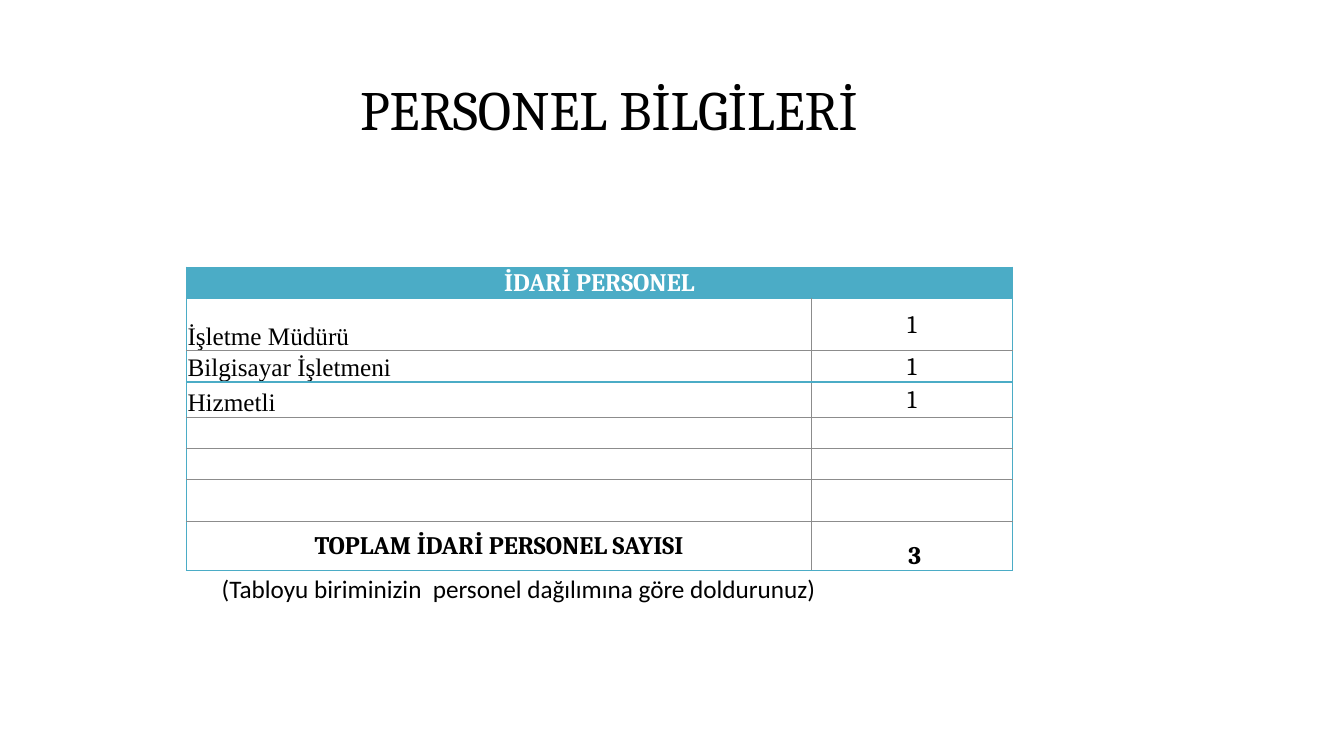
"""Build the staff information slide with its table."""
import pptx
import pptx.dml.color
import pptx.enum.text
import pptx.oxml.ns
import pptx.util
from lxml import etree

Inches = pptx.util.Inches
ALIGN = pptx.enum.text.PP_ALIGN
ANCHOR = pptx.enum.text.MSO_ANCHOR
COLORS = {"teal": "4BACC6", "grey": "8C8C8C", "white": "FFFFFF", "black": "000000"}
WIDTHS = [6.2, 1.99]
HEIGHTS = [0.3, 0.52, 0.3, 0.35, 0.3, 0.3, 0.41, 0.49]
STAFF = [("İşletme Müdürü", "1"), ("Bilgisayar İşletmeni", "1"), ("Hizmetli", "1")]


def rgb(name):
    return pptx.dml.color.RGBColor.from_string(COLORS[name])


def add_run(para, text, font, size=18, bold=False, color="black"):
    run = para.add_run()
    run.text = text
    run.font.name = font
    run.font.size = pptx.util.Pt(size)
    run.font.bold = bold
    run.font.color.rgb = rgb(color)


def add_text(slide, box, text, font, size, align, anchor):
    frame = slide.shapes.add_textbox(*map(Inches, box)).text_frame
    frame.word_wrap = True
    frame.vertical_anchor = anchor
    para = frame.paragraphs[0]
    para.alignment = align
    add_run(para, text, font, size)
    return para


def add_edge(cell, side, color):
    props = cell._tc.get_or_add_tcPr()
    qn = pptx.oxml.ns.qn
    line = etree.SubElement(props, qn("a:ln" + side), w=str(pptx.util.Pt(1)))
    fill = etree.SubElement(line, qn("a:solidFill"))
    etree.SubElement(fill, qn("a:srgbClr"), val=COLORS[color])


def style_cell(cell, row, col):
    cell.margin_left = cell.margin_right = cell.margin_top = Inches(0.01)
    cell.margin_bottom = 0
    teal = {"L": col == 0, "R": col == 1, "T": row in (0, 1, 3),
            "B": row in (0, 2, len(HEIGHTS) - 1)}
    for side, outer in teal.items():
        add_edge(cell, side, "teal" if outer or row == 0 else "grey")
    cell.fill.solid()
    cell.fill.fore_color.rgb = rgb("teal" if row == 0 else "white")


def fill_cell(cell, text, font="Cambria", align=ALIGN.CENTER,
              anchor=ANCHOR.MIDDLE, **look):
    cell.vertical_anchor = anchor
    para = cell.text_frame.paragraphs[0]
    para.alignment = align
    add_run(para, text, font, **look)


def add_staff(slide):
    box = map(Inches, (1.85, 2.65, sum(WIDTHS), sum(HEIGHTS)))
    table = slide.shapes.add_table(len(HEIGHTS), len(WIDTHS), *box).table
    table.first_row = table.horz_banding = False
    for col, width in enumerate(WIDTHS):
        table.columns[col].width = Inches(width)
    for row, height in enumerate(HEIGHTS):
        table.rows[row].height = Inches(height)
        for col in range(len(WIDTHS)):
            style_cell(table.cell(row, col), row, col)
    table.cell(0, 0).merge(table.cell(0, 1))
    fill_cell(table.cell(0, 0), "İDARİ PERSONEL", bold=True, color="white")
    for row, (job, count) in enumerate(STAFF, 1):
        fill_cell(table.cell(row, 0), job, "Times New Roman", ALIGN.LEFT, ANCHOR.BOTTOM)
        fill_cell(table.cell(row, 1), count)
    last = len(HEIGHTS) - 1
    fill_cell(table.cell(last, 0), "TOPLAM İDARİ PERSONEL SAYISI", bold=True)
    total = table.cell(last, 1)
    fill_cell(total, " ", anchor=ANCHOR.BOTTOM)
    add_run(total.text_frame.paragraphs[0], "3", "Cambria", bold=True)


def main():
    deck = pptx.Presentation()
    deck.slide_width, deck.slide_height = Inches(13.33), Inches(7.5)
    slide = deck.slides.add_slide(deck.slide_layouts[6])
    title = add_text(slide, (2.51, 0.76, 7.06, 0.71), "PERSONEL BİLGİLERİ",
                     "Cambria", 39.6, ALIGN.CENTER, ANCHOR.MIDDLE)
    title.line_spacing = 0.9
    add_staff(slide)
    add_text(slide, (2.1, 5.64, 8.95, 0.4),
             "(Tabloyu biriminizin  personel dağılımına göre doldurunuz)",
             "Calibri", 18, ALIGN.LEFT, ANCHOR.TOP)
    deck.save("out.pptx")


if __name__ == "__main__":
    main()
